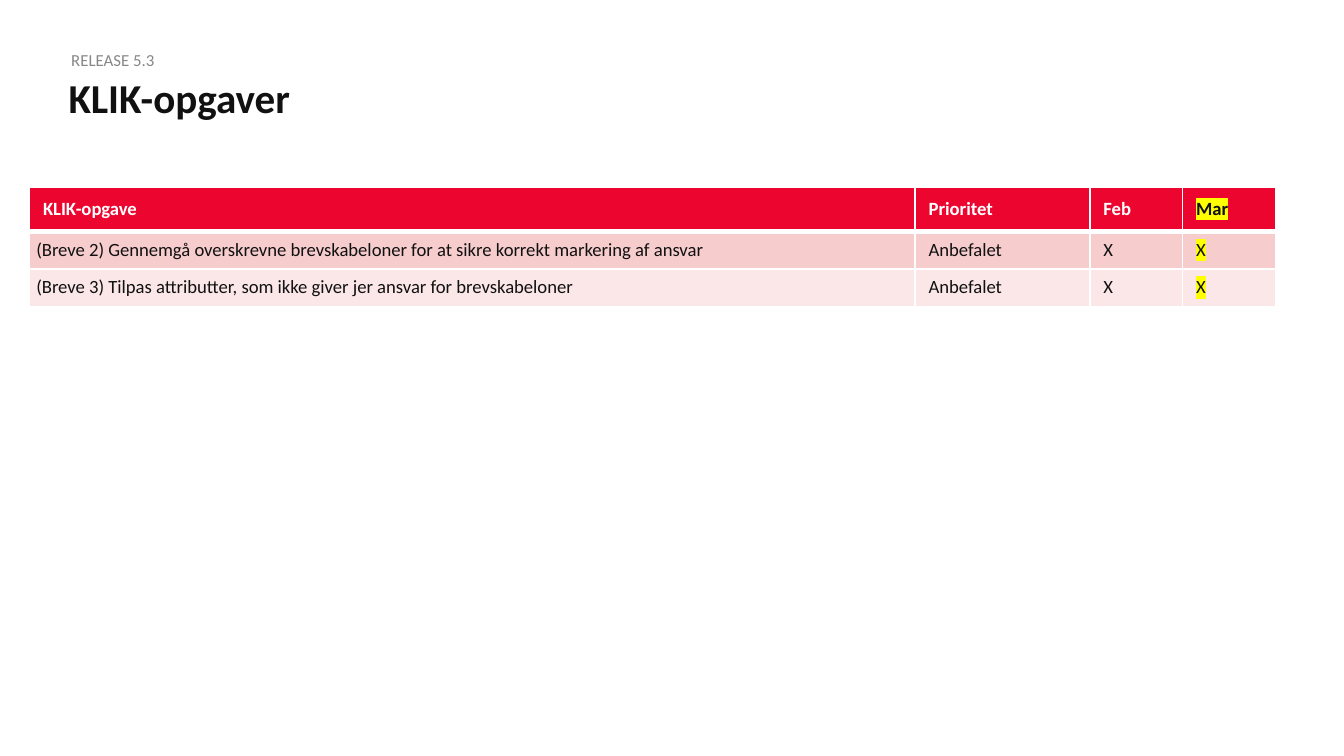
from lxml.etree import SubElement as Sub
from pptx import Presentation
from pptx.dml.color import RGBColor as RGB
from pptx.enum.text import MSO_ANCHOR as Anchor
from pptx.oxml import parse_xml
from pptx.oxml.ns import nsdecls, qn
from pptx.util import Inches, Pt

RED = RGB(0xEB, 0x05, 0x2F)
ROSE = RGB(0xF7, 0xCC, 0xCD)
PALE = RGB(0xFB, 0xE7, 0xE8)
INK = RGB(0x11, 0x11, 0x11)
GREY = RGB(0x87, 0x87, 0x87)
WHITE = RGB(0xFF, 0xFF, 0xFF)
YELLOW = RGB(0xFF, 0xFF, 0x00)


def put(frame, text, size=10, color=INK, bold=False, mark=None):
    """Write text into the first paragraph; mark is a highlight colour."""
    para = frame.paragraphs[0]
    run = para.add_run()
    run.text = text
    font = run.font
    font.name, font.size, font.bold = "Calibri", Pt(size), bold
    font.color.rgb = color
    if mark is not None:
        light = parse_xml(f'<a:highlight {nsdecls("a")}><a:srgbClr val="{mark}"/></a:highlight>')
        run._r.rPr.find(qn("a:solidFill")).addnext(light)
    return para


def edge(cell, side, width):
    line = Sub(cell._tc.get_or_add_tcPr(), qn(f"a:ln{side}"), w=str(Pt(width)))
    fill = Sub(line, qn("a:solidFill"))
    Sub(fill, qn("a:srgbClr"), val=str(WHITE))


prs = Presentation()
prs.slide_width = Inches(10)
prs.slide_height = Inches(10 * 9 / 16)
slide = prs.slides.add_slide(prs.slide_layouts[6])

# Headings
heads = [
    ("KLIK-opgaver", 0.61, 8.98, 0.71, 0, dict(size=22, bold=True)),
    ("RELEASE 5.3", 0.37, 4.49, 0.16, 0.02, dict(size=9, color=GREY)),
]
for text, top, width, height, inset, style in heads:
    box = slide.shapes.add_textbox(Inches(0.51), Inches(top), Inches(width), Inches(height))
    frame = box.text_frame
    frame.word_wrap = True
    frame.margin_left = Inches(inset)
    frame.margin_top = frame.margin_right = frame.margin_bottom = 0
    para = put(frame, text, **style)
    if style.get("bold"):
        para.line_spacing = 0.8

# Task table
rows = [
    ("KLIK-opgave", "Prioritet", "Feb", "Mar"),
    ("(Breve 2) Gennemgå overskrevne brevskabeloner for at sikre korrekt markering af ansvar",
     "Anbefalet", "X", "X"),
    ("(Breve 3) Tilpas attributter, som ikke giver jer ansvar for brevskabeloner",
     "Anbefalet", "X", "X"),
]
widths = [6.59, 1.3, 0.69, 0.69]
heights = [0.33, 0.28, 0.28]
fills = [RED, ROSE, PALE]
last = len(widths) - 1

table = slide.shapes.add_table(len(rows), len(widths), Inches(0.22), Inches(1.39),
                               Inches(sum(widths)), Inches(sum(heights))).table
for col, width in zip(table.columns, widths):
    col.width = Inches(width)

for r, texts in enumerate(rows):
    table.rows[r].height = Inches(heights[r])
    for c, text in enumerate(texts):
        cell = table.cell(r, c)
        head, marked = r == 0, c == last
        put(cell.text_frame, text, bold=head,
            color=WHITE if head and not marked else INK,
            mark=YELLOW if marked else None)
        cell.vertical_anchor = Anchor.MIDDLE
        if c == 0 and not head:
            cell.margin_left = cell.margin_right = Inches(0.05)
            cell.margin_top = cell.margin_bottom = 0
        for side in "LRTB":
            thick = (r, side) in [(0, "B"), (1, "T")]
            edge(cell, side, 3 if thick else 1)
        cell.fill.solid()
        cell.fill.fore_color.rgb = fills[r]

prs.save("out.pptx")
